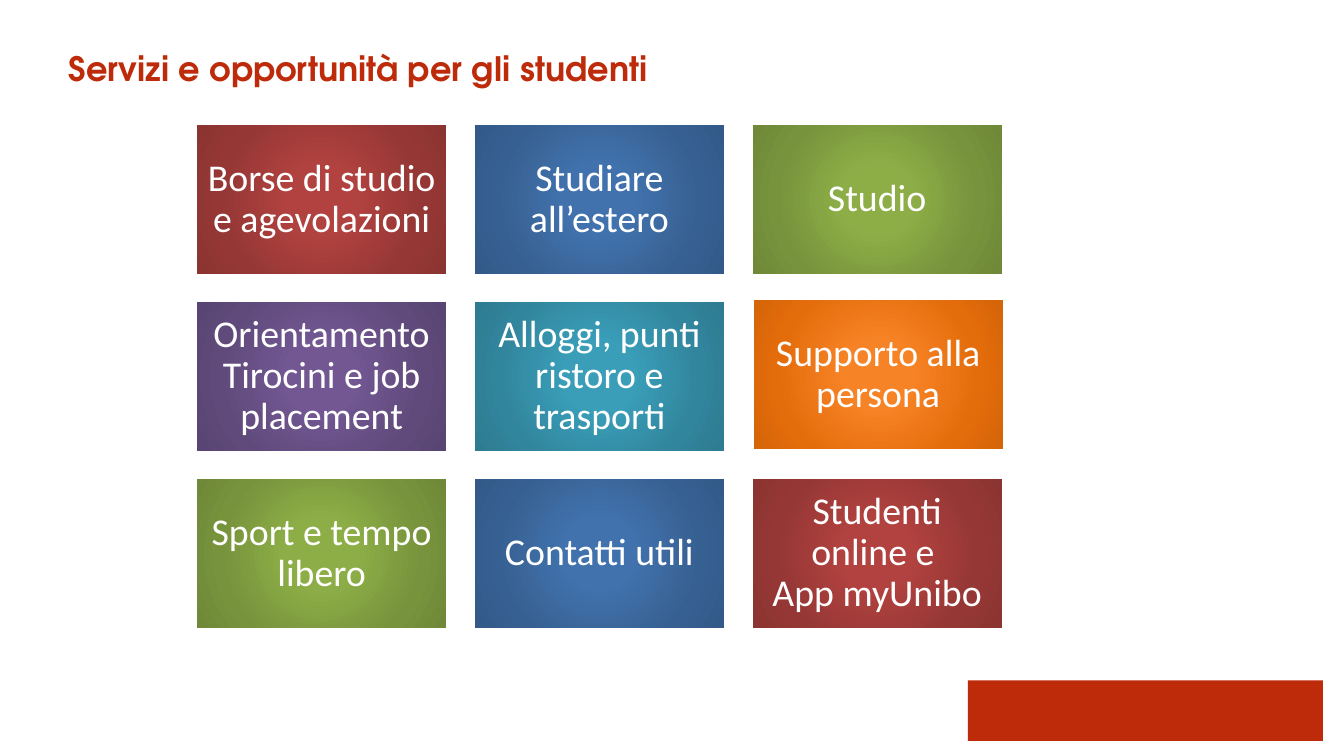
"""Build the slide on student services and opportunities."""
import pptx
import pptx.util
import pptx.dml.color
import pptx.enum.shapes
import pptx.enum.text
import pptx.oxml
import pptx.oxml.ns
from pptx.util import Inches

RECT = pptx.enum.shapes.MSO_SHAPE.RECTANGLE
ALIGN = pptx.enum.text.PP_ALIGN
ANCHOR = pptx.enum.text.MSO_ANCHOR


def color(code):
    return pptx.dml.color.RGBColor.from_string(code)


def shade(shape, codes):
    shape.fill.gradient()
    grad = shape.element.spPr.find(pptx.oxml.ns.qn("a:gradFill"))
    stops = "".join(
        f'<a:gs pos="{pos}000"><a:srgbClr val="{code}"/></a:gs>'
        for pos, code in zip((0, 23, 69, 97), codes[:1] + codes)
    )
    new = pptx.oxml.parse_xml(
        f'<a:gradFill {pptx.oxml.ns.nsdecls("a")} rotWithShape="1">'
        f'<a:gsLst>{stops}</a:gsLst><a:path path="circle">'
        '<a:fillToRect l="50000" t="50000" r="50000" b="50000"/>'
        "</a:path></a:gradFill>"
    )
    grad.getparent().replace(grad, new)


red = ["B1423F", "953735", "8B3431"]
blue = ["4172AD", "376092", "335A88"]
green = ["8DAE47", "77933C", "6F8938"]
violet = ["725792", "604A7B", "594573"]
teal = ["3A9EB9", "31859C", "2E7C91"]
orange = ["F68325", "E46C0A", "D56509"]
cards = [
    ("Borse di studio e agevolazioni", red),
    ("Studiare all’estero", blue),
    ("Studio", green),
    ("Orientamento Tirocini e job placement", violet),
    ("Alloggi, punti ristoro e trasporti", teal),
    ("Supporto alla persona", orange),
    ("Sport e tempo libero", green),
    ("Contatti utili", blue),
    ("Studenti online e \nApp myUnibo", red),
]

deck = pptx.Presentation()
deck.slide_width = Inches(13.33)
deck.slide_height = Inches(7.5)
slide = deck.slides.add_slide(deck.slide_layouts[5])

title = slide.shapes.title
title.left, title.top = Inches(0.58), Inches(0.52)
title.width, title.height = Inches(12.28), Inches(0.71)
frame = title.text_frame
frame.text = "Servizi e opportunità per gli studenti"
frame.word_wrap = True
frame.auto_size = pptx.enum.text.MSO_AUTO_SIZE.NONE
frame.vertical_anchor = ANCHOR.TOP
para = frame.paragraphs[0]
para.alignment = ALIGN.LEFT
para.line_spacing = pptx.util.Pt(22)
font = para.runs[0].font
font.name = "TeX Gyre Adventor"
font.size = pptx.util.Pt(24)
font.bold = True
font.color.rgb = color("BD2B0B")

band = slide.shapes.add_shape(
    RECT, Inches(9.6), Inches(6.75), Inches(3.52), Inches(0.6)
)
band.shadow.inherit = False
band.fill.solid()
band.fill.fore_color.rgb = color("BD2B0B")
band.line.fill.background()

for i, (text, codes) in enumerate(cards):
    row, col = divmod(i, 3)
    left, top = 1.94 + 2.755 * col, 1.23 + 1.755 * row
    if codes is orange:
        left, top = left + 0.01, top - 0.02
    card = slide.shapes.add_shape(
        RECT, Inches(left), Inches(top), Inches(2.5), Inches(1.5)
    )
    card.shadow.inherit = False
    shade(card, codes)
    card.line.color.rgb = color("FFFFFF")
    card.line.width = pptx.util.Pt(2)
    frame = card.text_frame
    frame.word_wrap = True
    frame.vertical_anchor = ANCHOR.MIDDLE
    frame.margin_left = frame.margin_right = Inches(0.11)
    frame.margin_top = frame.margin_bottom = Inches(0.11)
    para = frame.paragraphs[0]
    para.text = text
    para.alignment = ALIGN.CENTER
    para.line_spacing = 0.9
    for run in para.runs:
        run.font.name = "Calibri"
        run.font.size = pptx.util.Pt(27)
        run.font.color.rgb = color("FFFFFF")

deck.save("out.pptx")
